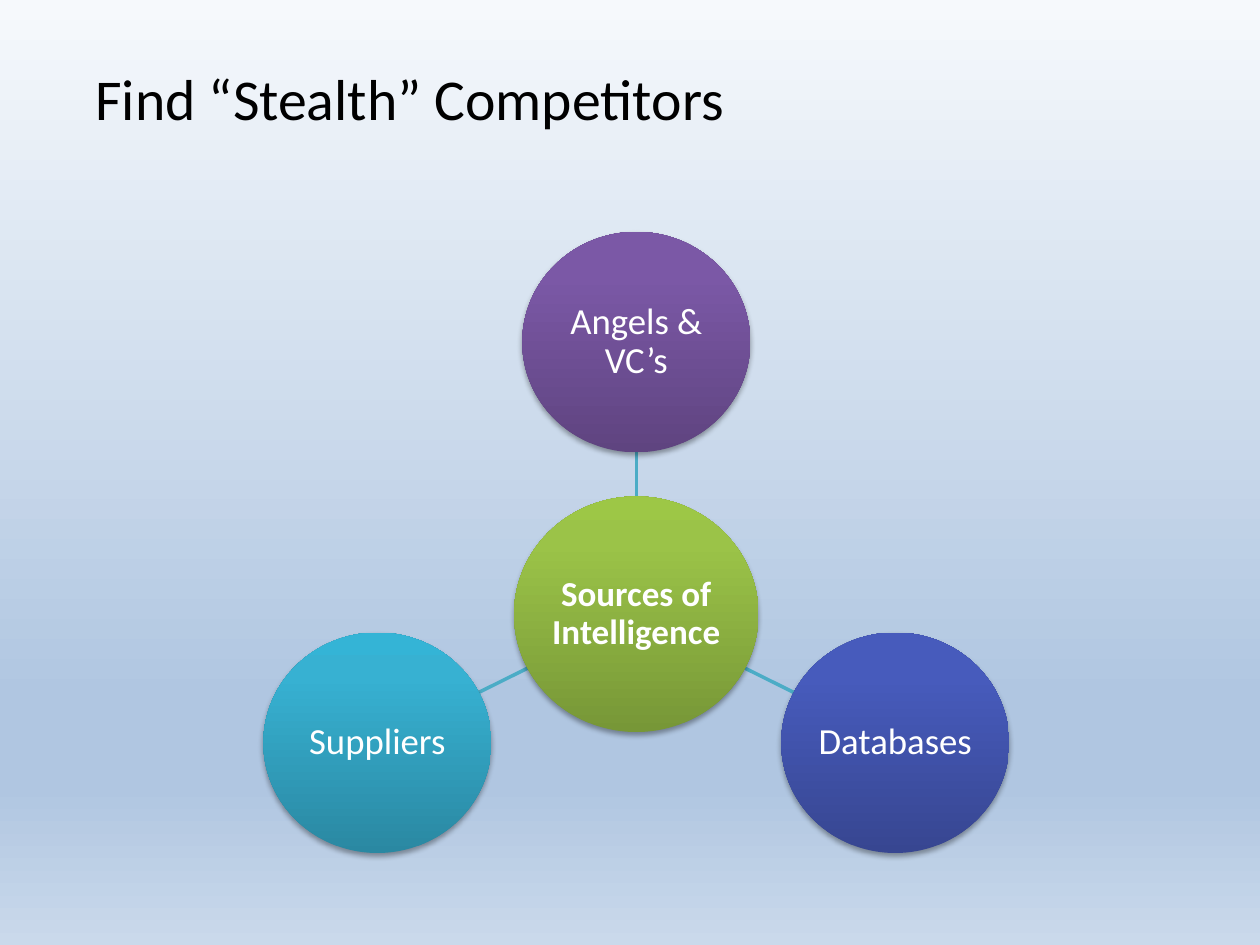
from math import hypot
from lxml import etree
from pptx import Presentation
from pptx.dml.color import RGBColor
from pptx.enum.shapes import MSO_CONNECTOR, MSO_SHAPE
from pptx.enum.text import MSO_ANCHOR, PP_ALIGN
from pptx.oxml import parse_xml
from pptx.oxml.ns import nsdecls, qn
from pptx.util import Inches, Pt

MIDDLE, CENTER = MSO_ANCHOR.MIDDLE, PP_ALIGN.CENTER
ELLIPSE, STRAIGHT = MSO_SHAPE.OVAL, MSO_CONNECTOR.STRAIGHT
COLORS = {
    "title": "000000", "label": "FFFFFF", "spoke": "4BACC6",
    "sky": [(0, "F6F9FC"), (74, "B0C6E1"), (83, "B0C6E1"), (100, "CAD9EB")],
    "green": [(0, "779737"), (80, "9BC348"), (100, "9DC746")],
    "purple": [(0, "5F4480"), (80, "7B58A6"), (100, "7C57A8")],
    "blue": [(0, "374691"), (80, "475BBC"), (100, "455ABF")],
    "teal": [(0, "2A88A2"), (80, "37B1D2"), (100, "34B4D6")],
}

deck = Presentation()
deck.slide_width, deck.slide_height = Inches(10), Inches(7.5)
COL, ROW = deck.slide_width / 100, deck.slide_height / 75
page = deck.slides.add_slide(deck.slide_layouts[6])


def set_gradient(fill, owner, stops, angle):
    fill.gradient()
    fill.gradient_angle = angle
    stop_list = next(owner.iter(qn("a:gsLst")))
    for stop in list(stop_list):
        stop_list.remove(stop)
    for place, color in stops:
        stop_list.append(parse_xml(
            f'<a:gs {nsdecls("a")} pos="{place * 1000}"><a:srgbClr val="{color}"/></a:gs>'))


def write_text(frame, text, size, color, bold=False):
    frame.word_wrap = True
    frame.vertical_anchor = MIDDLE
    frame.text = text
    font = frame.paragraphs[0].runs[0].font
    font.name, font.size, font.bold = "Calibri", Pt(size), bold
    font.color.rgb = RGBColor.from_string(COLORS[color])


background = page.background
set_gradient(background.fill, page.element, COLORS["sky"], 270)

title = page.shapes.add_textbox(int(6.6 * COL), int(1.5 * ROW), int(90 * COL), int(12.5 * ROW))
write_text(title.text_frame, "Find “Stealth” Competitors", 33, "title")

hub_x, hub_y, hub_width, hub_height = 50.5, 48.75, 19.4, 18.7
width, height = 18.1, 17.5
satellites = [
    ("Angels & VC’s", "purple", 0, -21.6),
    ("Databases", "blue", 20.55, 10.2),
    ("Suppliers", "teal", -20.55, 10.2),
]

for name, color, dx, dy in satellites:
    start = 0.5 / hypot(dx / hub_width, dy / hub_height)
    end = 1 - 0.5 / hypot(dx / width, dy / height)
    spoke = page.shapes.add_connector(
        STRAIGHT,
        int((hub_x + dx * start) * COL), int((hub_y + dy * start) * ROW),
        int((hub_x + dx * end) * COL), int((hub_y + dy * end) * ROW))
    spoke.line.color.rgb = RGBColor.from_string(COLORS["spoke"])
    spoke.line.width = Pt(2)
    etree.SubElement(spoke.element.spPr, qn("a:effectLst"))

circles = [("Sources of Intelligence", "green", hub_x, hub_y, hub_width, hub_height, 20, True)]
for name, color, dx, dy in satellites:
    circles.append((name, color, hub_x + dx, hub_y + dy, width, height, 21, False))

for name, color, x, y, wide, high, size, bold in circles:
    circle = page.shapes.add_shape(
        ELLIPSE, int((x - wide / 2) * COL), int((y - high / 2) * ROW),
        int(wide * COL), int(high * ROW))
    set_gradient(circle.fill, circle.element, COLORS[color], 90)
    circle.line.fill.background()
    circle.shadow.inherit = False
    circle.element.spPr.find(qn("a:effectLst")).append(parse_xml(
        f'<a:outerShdw {nsdecls("a")} blurRad="{Pt(3.1)}" dist="{Pt(1.8)}" dir="5400000" '
        'rotWithShape="0"><a:srgbClr val="000000"><a:alpha val="35000"/></a:srgbClr></a:outerShdw>'))
    frame = circle.text_frame
    frame.margin_left = frame.margin_right = frame.margin_top = frame.margin_bottom = Inches(0.01)
    write_text(frame, name, size, "label", bold)
    para = frame.paragraphs[0]
    para.alignment, para.line_spacing = CENTER, 0.9

deck.save("out.pptx")
